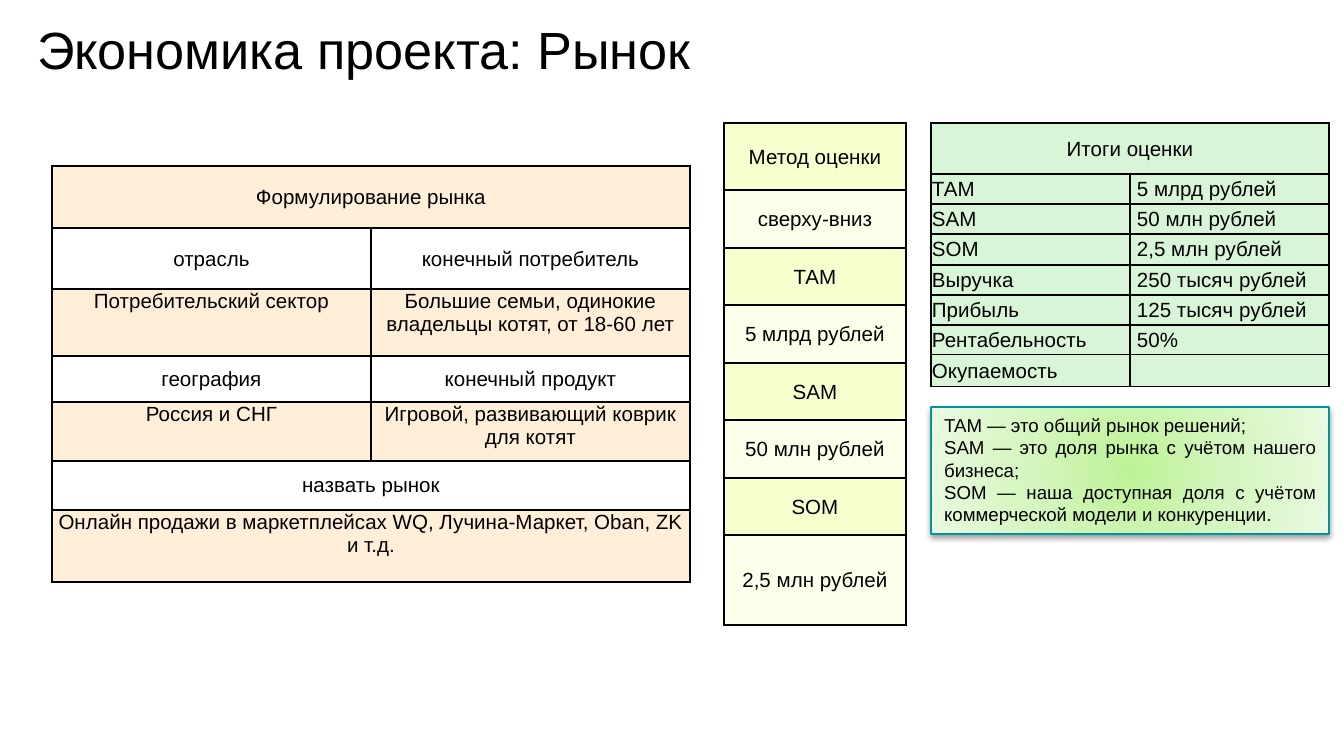
from dataclasses import dataclass

from lxml.etree import SubElement
from pptx import Presentation
from pptx.dml.color import RGBColor
from pptx.enum.shapes import MSO_SHAPE as Shape
from pptx.enum.text import MSO_ANCHOR as Anchor, MSO_AUTO_SIZE as AutoSize, PP_ALIGN as Align
from pptx.oxml import parse_xml
from pptx.oxml.ns import nsdecls, qn
from pptx.util import Emu, Pt

EMU_PER_PX = 914400 / 134.4


def px(length):
    return Emu(round(length * EMU_PER_PX))


@dataclass(frozen=True)
class Theme:
    font: str = "Arial"
    title_size: int = 28
    table_size: int = 11
    note_size: int = 10
    ink: str = "000000"
    # Fills are (colour, opacity in percent)
    orange: tuple = ("FFAB40", 20)
    green: tuple = ("33CC33", 19)
    yellow: tuple = ("F8FFCF", 100)
    pale_yellow: tuple = ("FCFFE9", 100)
    glow: tuple = ((0, "BEF297"), (50, "D5F6C0"), (100, "EAFAE0"))
    note_line: str = "0094A3"


class SlideBuilder:
    def __init__(self, page, theme):
        self.page = page
        self.theme = theme

    def add_text(self, para, text, size, align):
        para.alignment = align
        if not text:
            SubElement(para._p, qn("a:endParaRPr"), sz=str(size * 100))
            return
        span = para.add_run()
        span.text = text
        span.font.name = self.theme.font
        span.font.size = Pt(size)
        span.font.color.rgb = RGBColor.from_string(self.theme.ink)

    def title(self, text, left, top, width, height):
        box = self.page.shapes.title
        box.left, box.top, box.width, box.height = map(px, (left, top, width, height))
        frame = box.text_frame
        frame.margin_left = frame.margin_right = px(13)
        frame.margin_top = frame.margin_bottom = px(13)
        frame.vertical_anchor = Anchor.TOP
        frame.auto_size = AutoSize.NONE
        self.add_text(frame.paragraphs[0], text, self.theme.title_size, Align.LEFT)

    def cell(self, cell, text, fill, align=Align.CENTER, anchor=Anchor.MIDDLE, indent=1):
        cell.margin_left, cell.margin_right = px(indent), px(1)
        cell.margin_top, cell.margin_bottom = px(1), 0
        cell.vertical_anchor = anchor
        # Borders come before the fill
        properties = cell._tc.get_or_add_tcPr()
        for side in ("lnL", "lnR", "lnT", "lnB"):
            properties.append(parse_xml(
                f'<a:{side} {nsdecls("a")} w="12700"><a:solidFill>'
                f'<a:srgbClr val="{self.theme.ink}"/></a:solidFill></a:{side}>'))
        if fill:
            colour, opacity = fill
            cell.fill.solid()
            cell.fill.fore_color.rgb = RGBColor.from_string(colour)
            if opacity < 100:
                tint = properties.find(qn("a:solidFill")).find(qn("a:srgbClr"))
                SubElement(tint, qn("a:alpha"), val=str(opacity * 1000))
        else:
            cell.fill.background()
        self.add_text(cell.text_frame.paragraphs[0], text, self.theme.table_size, align)

    def table(self, left, top, columns, heights, rows, style):
        """Rows shorter than the column count span the table; style(row, column) formats a cell."""
        frame = self.page.shapes.add_table(
            len(rows), len(columns), px(left), px(top), px(sum(columns)), px(sum(heights)))
        table = frame.table
        table.first_row = table.horz_banding = False
        for column, width in zip(table.columns, columns):
            column.width = px(width)
        for r, (texts, height) in enumerate(zip(rows, heights)):
            table.rows[r].height = px(height)
            if len(texts) < len(columns):
                table.cell(r, 0).merge(table.cell(r, len(columns) - 1))
            for c in range(len(columns)):
                self.cell(table.cell(r, c), texts[c] if c < len(texts) else "", **style(r, c))

    def note(self, left, top, width, height, lines):
        box = self.page.shapes.add_shape(Shape.RECTANGLE, *map(px, (left, top, width, height)))
        box.line.color.rgb = RGBColor.from_string(self.theme.note_line)
        box.line.width = Pt(0.75)
        # Radial glow and soft shadow
        stops = "".join(f'<a:gs pos="{at * 1000}"><a:srgbClr val="{colour}"/></a:gs>'
                        for at, colour in self.theme.glow)
        properties = box._element.spPr
        properties.find(qn("a:prstGeom")).addnext(parse_xml(
            f'<a:gradFill {nsdecls("a")}><a:gsLst>{stops}</a:gsLst><a:path path="circle">'
            '<a:fillToRect l="50000" t="50000" r="50000" b="50000"/></a:path></a:gradFill>'))
        properties.append(parse_xml(
            f'<a:effectLst {nsdecls("a")}><a:outerShdw blurRad="39370" dist="20320" dir="5400000" '
            f'rotWithShape="0"><a:srgbClr val="{self.theme.ink}"><a:alpha val="38000"/></a:srgbClr>'
            '</a:outerShdw></a:effectLst>'))
        frame = box.text_frame
        frame.word_wrap = True
        frame.auto_size = AutoSize.SHAPE_TO_FIT_TEXT
        frame.vertical_anchor = Anchor.TOP
        for i, line in enumerate(lines):
            para = frame.add_paragraph() if i else frame.paragraphs[0]
            self.add_text(para, line, self.theme.note_size, Align.JUSTIFY)


def main():
    theme = Theme()
    deck = Presentation()
    deck.slide_width, deck.slide_height = px(1344), px(756)
    page = deck.slides.add_slide(deck.slide_layouts[5])
    slide = SlideBuilder(page, theme)

    slide.title("Экономика проекта: Рынок", 24, 4, 1253, 85)

    # Market definition: questions on white, answers on orange
    def market_style(row, column):
        return {"fill": None if row % 2 else theme.orange,
                "anchor": Anchor.TOP if row and row % 2 == 0 else Anchor.MIDDLE}

    slide.table(52, 166, [319, 319], [62, 61, 67, 46, 59, 49, 72], [
        ["Формулирование рынка"],
        ["отрасль", "конечный потребитель"],
        ["Потребительский сектор", "Большие семьи, одинокие владельцы котят, от 18-60 лет"],
        ["география", "конечный продукт"],
        ["Россия и СНГ", "Игровой, развивающий коврик для котят"],
        ["назвать рынок"],
        ["Онлайн продажи в маркетплейсах WQ, Лучина-Маркет, Oban, ZK и т.д."],
    ], market_style)

    # Estimation method: alternating yellows
    def method_style(row, column):
        return {"fill": theme.pale_yellow if row % 2 else theme.yellow}

    method = ["Метод оценки", "сверху-вниз", "ТАМ", "5 млрд рублей",
              "SAM", "50 млн рублей", "SOM", "2,5 млн рублей"]
    slide.table(724, 123, [182], [67, 58, 57, 58, 57, 58, 57, 90],
                [[text] for text in method], method_style)

    # Results: centred header, left-aligned figures
    def result_style(row, column):
        return {"fill": theme.green, "indent": 7 if column else 1,
                "align": Align.LEFT if row else Align.CENTER}

    slide.table(931, 123, [199, 199], [51, 30, 30, 31, 30, 30, 30, 32], [
        ["Итоги оценки"],
        ["ТАМ", "5 млрд рублей"],
        ["SAM", "50 млн рублей"],
        ["SOM", "2,5 млн рублей"],
        ["Выручка", "250 тысяч рублей"],
        ["Прибыль", "125 тысяч рублей"],
        ["Рентабельность", "50%"],
        ["Окупаемость", ""],
    ], result_style)

    # Glossary
    slide.note(931, 407, 398, 127, [
        "TAM — это общий рынок решений;",
        "SAM — это доля рынка с учётом нашего бизнеса;",
        "SOM — наша доступная доля с учётом коммерческой модели и конкуренции.",
    ])

    deck.save("out.pptx")


if __name__ == "__main__":
    main()
